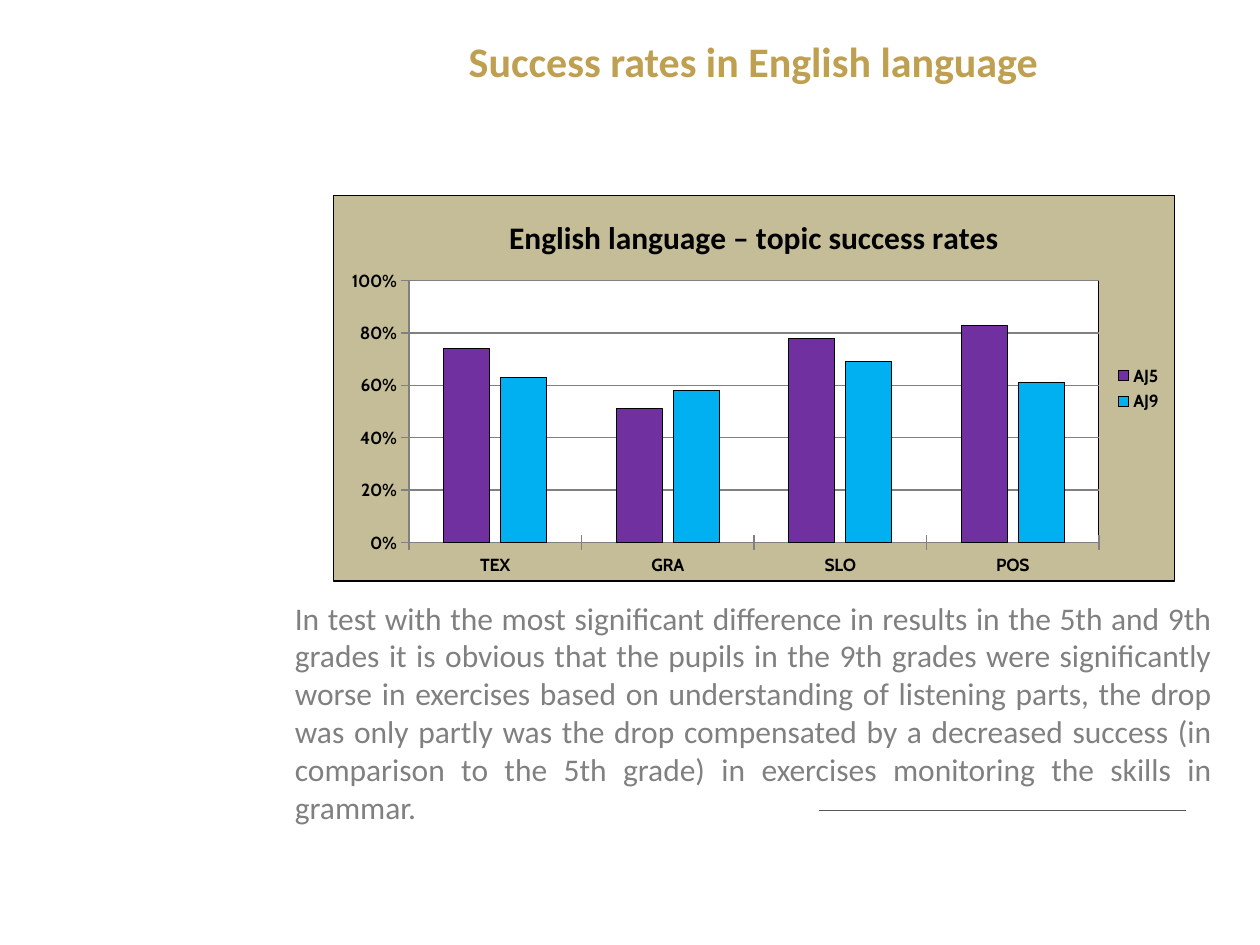
"""Build a slide with a chart of English language success rates."""
from lxml import etree
from pptx import Presentation
from pptx.chart.data import CategoryChartData
from pptx.dml.color import RGBColor
from pptx.enum.chart import XL_CHART_TYPE as ChartType
from pptx.enum.chart import XL_LEGEND_POSITION as LegendPos
from pptx.enum.chart import XL_TICK_MARK as Tick
from pptx.enum.shapes import MSO_CONNECTOR as Connector
from pptx.enum.text import MSO_ANCHOR as Anchor
from pptx.enum.text import MSO_AUTO_SIZE as AutoSize
from pptx.enum.text import PP_ALIGN as Align
from pptx.oxml import parse_xml
from pptx.oxml.ns import nsdecls, qn
from pptx.util import Pt

GOLD = RGBColor(0xBF, 0xA0, 0x50)
GREY = RGBColor(0x80, 0x80, 0x80)
DARK = RGBColor(0x58, 0x56, 0x5B)
BLACK = RGBColor(0, 0, 0)
WHITE = RGBColor(0xFF, 0xFF, 0xFF)
SAND = RGBColor(0xC4, 0xBD, 0x97)
PURPLE = RGBColor(0x70, 0x30, 0xA0)
BLUE = RGBColor(0x00, 0xB0, 0xF0)

TOPICS = ["TEX", "GRA", "SLO", "POS"]
SERIES = [
    ("AJ5", [0.74, 0.51, 0.78, 0.83], PURPLE),
    ("AJ9", [0.63, 0.58, 0.69, 0.61], BLUE),
]
COMMENT = (
    "In test with the most significant difference in results in the 5th and "
    "9th grades it is obvious that the pupils in the 9th grades were "
    "significantly worse in exercises based on understanding of listening "
    "parts, the drop was only partly was the drop compensated by a decreased "
    "success (in comparison to the 5th grade) in exercises monitoring the "
    "skills in grammar."
)


def style_font(font, name, size, color, bold=False):
    """Set the face, size, colour and weight of a font."""
    font.name, font.size, font.bold = name, Pt(size), bold
    font.color.rgb = color


def fill_placeholder(sp, box, text, size, color, align, anchor, bold=False):
    """Move a placeholder and give it one unbulleted paragraph."""
    sp.left, sp.top, sp.width, sp.height = (Pt(v) for v in box)
    tf = sp.text_frame
    tf.auto_size, tf.vertical_anchor = AutoSize.NONE, anchor
    p = tf.paragraphs[0]
    pPr = p._p.get_or_add_pPr()
    pPr.set("marL", "0")
    pPr.set("indent", "0")
    etree.SubElement(pPr, qn("a:buNone"))
    p.alignment, p.space_before = align, Pt(0)
    r = p.add_run()
    r.text = text
    style_font(r.font, "Calibri", size, color, bold)


def add_rule(slide, x1, x2, y):
    """Draw a thin horizontal line."""
    line = slide.shapes.add_connector(Connector.STRAIGHT, Pt(x1), Pt(y), Pt(x2), Pt(y))
    line.line.color.rgb, line.line.width = DARK, Pt(0.75)
    etree.SubElement(line._element.spPr, qn("a:effectLst"))


def area_format(fill, width):
    """Return chart area properties with a fill and a black border."""
    return parse_xml(
        f'<c:spPr {nsdecls("c", "a")}>'
        f'<a:solidFill><a:srgbClr val="{fill}"/></a:solidFill>'
        f'<a:ln w="{Pt(width)}"><a:solidFill><a:srgbClr val="{BLACK}"/></a:solidFill></a:ln>'
        "</c:spPr>"
    )


def place_plot(plot_area, x, y, w, h):
    """Fix the inner plot area as fractions of the chart."""
    for old in plot_area.findall(qn("c:layout")):
        plot_area.remove(old)
    parts = "".join(f'<c:{k} val="{v}"/>' for k, v in zip("xywh", (x, y, w, h)))
    plot_area.insert(0, parse_xml(
        f'<c:layout {nsdecls("c")}><c:manualLayout><c:layoutTarget val="inner"/>'
        f'<c:xMode val="edge"/><c:yMode val="edge"/>{parts}</c:manualLayout></c:layout>'
    ))


def style_axis(axis):
    """Format the labels, line and ticks of an axis."""
    axis.major_tick_mark, axis.minor_tick_mark = Tick.CROSS, Tick.NONE
    axis.format.line.color.rgb = GREY
    style_font(axis.tick_labels.font, "Cabin", 10, BLACK, True)


def add_rates_chart(slide, box):
    """Add the column chart of topic success rates."""
    data = CategoryChartData(number_format="0%")
    data.categories = TOPICS
    for name, values, _ in SERIES:
        data.add_series(name, values)
    frame = slide.shapes.add_chart(ChartType.COLUMN_CLUSTERED, *(Pt(v) for v in box), data)
    chart = frame.chart
    style_font(chart.font, "Calibri", 10, BLACK)

    r = chart.chart_title.text_frame.paragraphs[0].add_run()
    r.text = "English language – topic success rates"
    style_font(r.font, "Calibri", 18, BLACK, True)
    chart.chart_title.include_in_layout = False

    chart.has_legend = True
    chart.legend.position, chart.legend.include_in_layout = LegendPos.RIGHT, False
    style_font(chart.legend.font, "Cabin", 10, BLACK, True)

    plot = chart.plots[0]
    plot.gap_width, plot.overlap, plot.vary_by_categories = 150, -24, False
    for s, (_, _, color) in zip(plot.series, SERIES):
        s.format.fill.solid()
        s.format.fill.fore_color.rgb = color
        s.format.line.color.rgb, s.format.line.width = BLACK, Pt(0.5)

    style_axis(chart.category_axis)
    axis = chart.value_axis
    style_axis(axis)
    axis.minimum_scale, axis.maximum_scale, axis.major_unit = 0, 1, 0.2
    axis.tick_labels.number_format = "0%"
    axis.tick_labels.number_format_is_linked = False
    axis.major_gridlines.format.line.color.rgb = GREY

    chart_xml = chart._chartSpace.find(qn("c:chart"))
    chart_xml.addnext(area_format(SAND, 0.75))
    plot_area = chart_xml.find(qn("c:plotArea"))
    place_plot(plot_area, 0.09, 0.22, 0.82, 0.68)
    plot_area.append(area_format(WHITE, 0.5))


def main():
    """Build and save the slide."""
    prs = Presentation()
    prs.slide_width, prs.slide_height = Pt(720), Pt(540)
    slide = prs.slides.add_slide(prs.slide_layouts[1])
    title, body = slide.placeholders
    add_rule(slide, 677.5, 468, 463)
    fill_placeholder(title, (161.3, 3.6, 538.6, 62.6), "Success rates in English language",
                     24, GOLD, Align.CENTER, Anchor.MIDDLE, True)
    fill_placeholder(body, (161.3, 338.5, 538.6, 141.7), COMMENT,
                     18, GREY, Align.JUSTIFY, Anchor.TOP)
    add_rates_chart(slide, (190, 111.5, 481.7, 221))
    prs.save("out.pptx")


if __name__ == "__main__":
    main()
